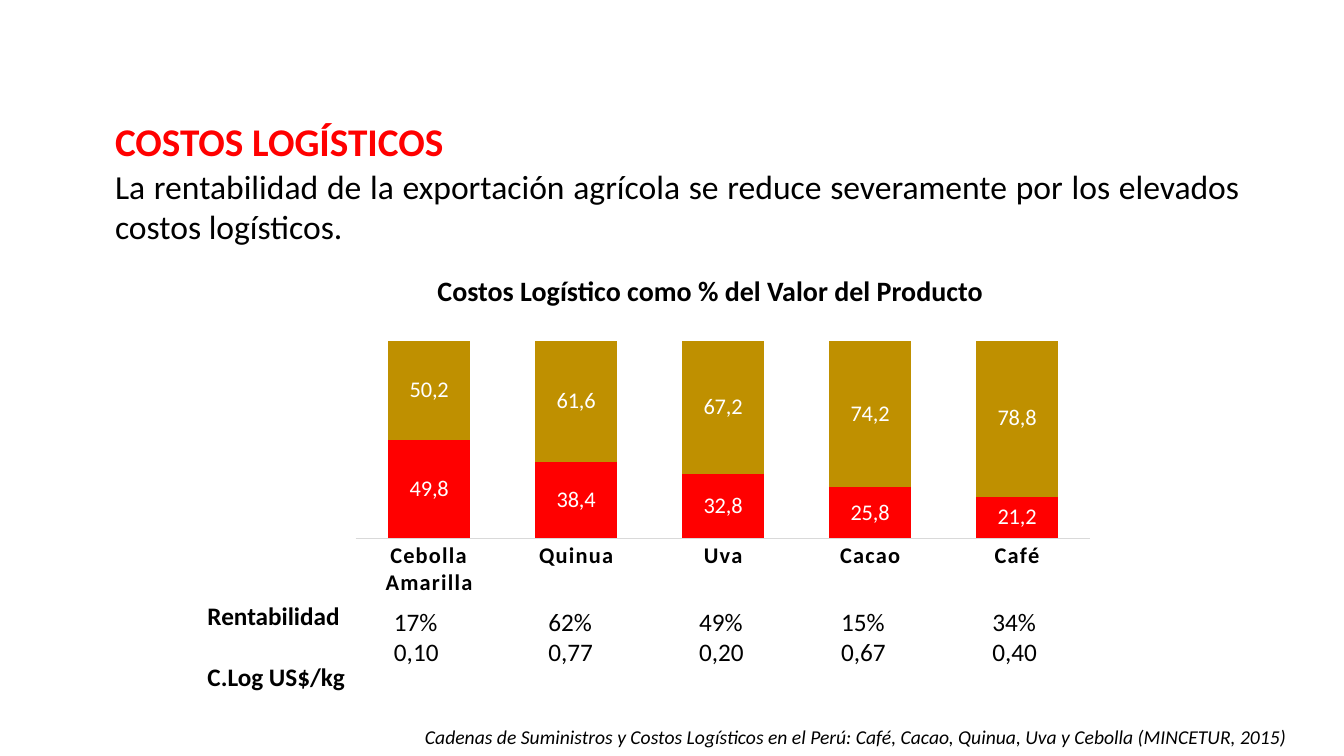
from lxml import etree
from pptx import Presentation
from pptx import util as u
from pptx.chart import data as chart_data
from pptx.dml import color
from pptx.enum import chart as chart_enum
from pptx.enum import text
from pptx.oxml import ns

FONT = "Calibri"
BLACK, WHITE, RED, GOLD, GREY = "000000", "FFFFFF", "FF0000", "BF9000", "D9D9D9"
PRODUCTS = [
    ("Cebolla Amarilla", 49.8, 50.2, "17%", "0,10", 9.68),
    ("Quinua", 38.4, 61.6, "62%", "0,77", 13.57),
    ("Uva", 32.8, 67.2, "49%", "0,20", 17.37),
    ("Cacao", 25.8, 74.2, "15%", "0,67", 20.95),
    ("Café", 21.2, 78.8, "34%", "0,40", 24.76),
]


def rgb(value):
    """Return a colour from its hex string."""
    return color.RGBColor.from_string(value)


def style_font(font, size, hex_color=BLACK, **flags):
    """Apply the slide font, a size in points, a colour and flags."""
    values = {"name": FONT, "size": u.Pt(size), **flags}
    for name, value in values.items():
        setattr(font, name, value)
    font.color.rgb = rgb(hex_color)


def add_text(slide, box, lines, size, hex_color=BLACK, align=text.PP_ALIGN.LEFT,
             wrap=True, gap=0, **flags):
    """Add a text box with one paragraph per line."""
    frame = slide.shapes.add_textbox(*(u.Cm(length) for length in box)).text_frame
    frame.word_wrap = wrap
    for index, line in enumerate(lines):
        paragraph = frame.add_paragraph() if index else frame.paragraphs[0]
        paragraph.alignment = align
        if index and gap:
            paragraph.space_before = u.Pt(gap)
        run = paragraph.add_run()
        run.text = line
        style_font(run.font, size, hex_color, **flags)


def place_plot(chart, x, y, w, h):
    """Fix the inner plot area as fractions of the chart."""
    plot_area = chart.plots[0]._element.getparent()
    for old in plot_area.findall(ns.qn("c:layout")):
        plot_area.remove(old)
    layout = etree.Element(ns.qn("c:layout"))
    manual = etree.SubElement(layout, ns.qn("c:manualLayout"))
    settings = {"layoutTarget": "inner", "xMode": "edge", "yMode": "edge",
                "x": x, "y": y, "w": w, "h": h}
    for name, value in settings.items():
        etree.SubElement(manual, ns.qn(f"c:{name}")).set("val", str(value))
    plot_area.insert(0, layout)


def style_axes(chart):
    """Hide the value axis and format the product axis."""
    hidden = {"visible": False, "has_major_gridlines": False,
              "minimum_scale": 0, "maximum_scale": 120}
    for name, value in hidden.items():
        setattr(chart.value_axis, name, value)
    axis = chart.category_axis
    axis.major_tick_mark = chart_enum.XL_TICK_MARK.NONE
    axis.format.line.color.rgb = rgb(GREY)
    axis.format.line.width = u.Pt(0.75)
    style_font(axis.tick_labels.font, 16, bold=True)
    axis._element.find(".//" + ns.qn("a:defRPr")).set("spc", "100")


def style_series(series, hex_color):
    """Fill a series and label its points with decimal commas."""
    series.format.fill.solid()
    series.format.fill.fore_color.rgb = rgb(hex_color)
    center = chart_enum.XL_LABEL_POSITION.CENTER
    labels = series.data_labels
    for name, value in {"show_value": True, "position": center}.items():
        setattr(labels, name, value)
    style_font(labels.font, 16, WHITE, bold=True)
    for index, value in enumerate(series.values):
        label = series.points[index].data_label
        run = label.text_frame.paragraphs[0].add_run()
        run.text = f"{value:.1f}".replace(".", ",")
        style_font(run.font, 16, WHITE, bold=False)
        label.position = center


def add_cost_chart(slide, box):
    """Add the stacked columns of logistics cost and remaining value."""
    names, costs, remainders, *_ = zip(*PRODUCTS)
    data = chart_data.CategoryChartData(number_format="0.0")
    data.categories = names
    data.add_series("Series 1", costs)
    data.add_series("Series 2", remainders)
    chart = slide.shapes.add_chart(chart_enum.XL_CHART_TYPE.COLUMN_STACKED,
                                   *(u.Cm(length) for length in box), data).chart
    chart.has_legend = chart.has_title = False
    style_font(chart.font, 10)
    plot = chart.plots[0]
    for name, value in {"gap_width": 79, "overlap": 100, "vary_by_categories": False}.items():
        setattr(plot, name, value)
    for series, hex_color in zip(plot.series, (RED, GOLD)):
        style_series(series, hex_color)
    style_axes(chart)
    place_plot(chart, 0.02, 0.15, 0.96, 0.67)


def main():
    """Build and save the logistics cost slide."""
    presentation = Presentation()
    presentation.slide_width, presentation.slide_height = u.Cm(33.87), u.Cm(19.05)
    slide = presentation.slides.add_slide(presentation.slide_layouts[6])
    add_text(slide, (2.65, 2.82, 25.83, 1.45), ["COSTOS LOGÍSTICOS"], 28, RED, bold=True)
    add_text(slide, (2.65, 4.05, 28.85, 2.31),
             ["La rentabilidad de la exportación agrícola se reduce severamente "
              "por los elevados costos logísticos."], 24, align=text.PP_ALIGN.JUSTIFY)
    add_cost_chart(slide, (8.58, 6.25, 19.29, 8.93))
    add_text(slide, (9.67, 6.76, 16.46, 1.12),
             ["Costos Logístico como % del Valor del Producto"], 20,
             align=text.PP_ALIGN.CENTER, bold=True)
    add_text(slide, (4.98, 15.01, 4.01, 2.57), ["Rentabilidad", "C.Log US$/kg"], 18,
             wrap=False, gap=22, bold=True)
    for *_, profit, unit_cost, left in PRODUCTS:
        add_text(slide, (left, 15.16, 1.88, 3.33), [profit, unit_cost], 18)
    add_text(slide, (4.98, 18.14, 27.71, 0.86),
             ["Cadenas de Suministros y Costos Logísticos en el Perú: Café, Cacao, "
              "Quinua, Uva y Cebolla (MINCETUR, 2015)"], 14,
             align=text.PP_ALIGN.RIGHT, italic=True)
    presentation.save("out.pptx")


if __name__ == "__main__":
    main()
